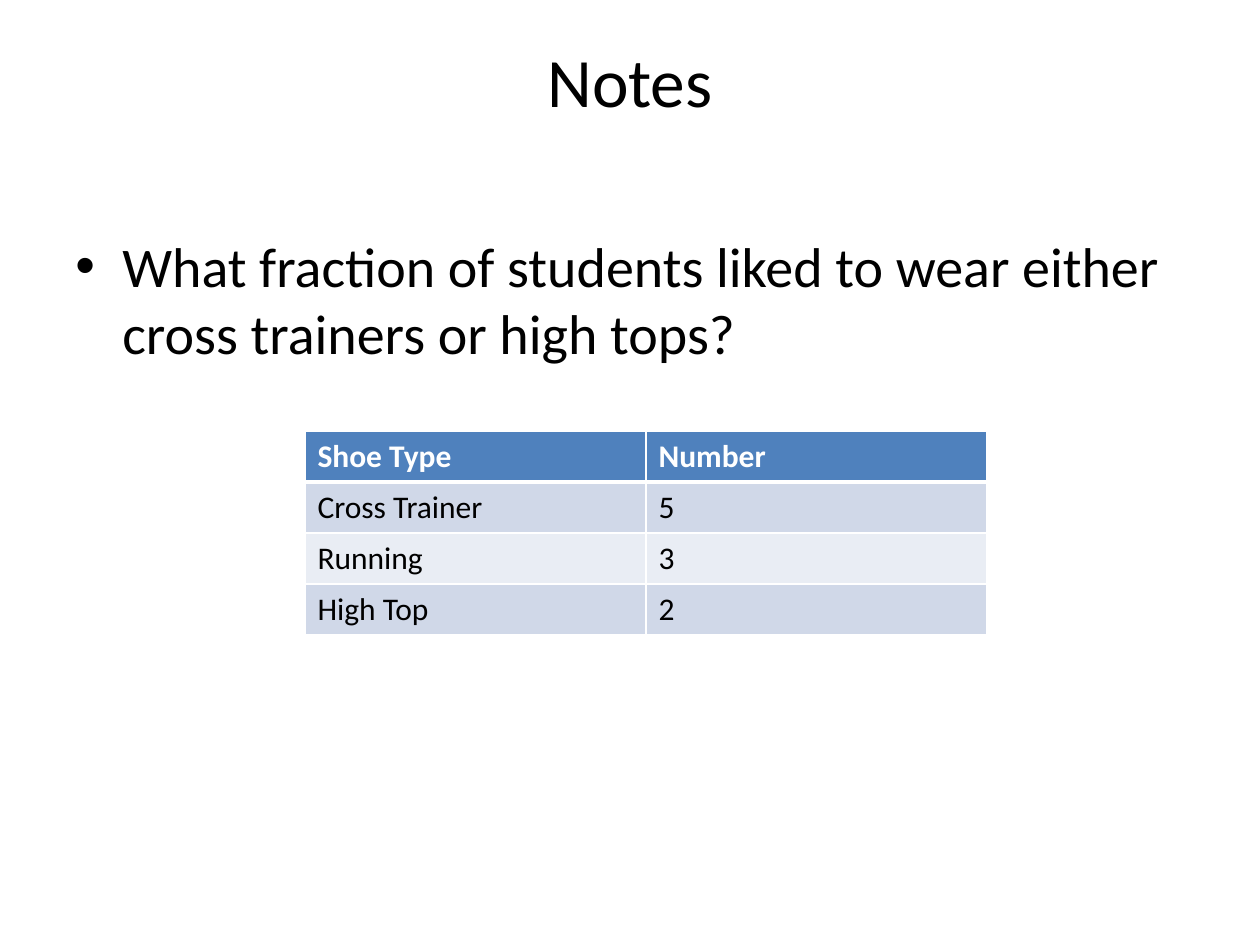
"""Build a slide with a question about shoe types and a table of counts."""
import lxml.etree
import pptx
import pptx.dml.color
import pptx.enum.text
import pptx.oxml
import pptx.oxml.ns
import pptx.util

PX = 914400 / 126
BLACK = pptx.dml.color.RGBColor(0x00, 0x00, 0x00)
WHITE = pptx.dml.color.RGBColor(0xFF, 0xFF, 0xFF)
HEADER_BLUE = pptx.dml.color.RGBColor(0x4F, 0x81, 0xBD)
BANDS = [pptx.dml.color.RGBColor(0xE9, 0xED, 0xF4), pptx.dml.color.RGBColor(0xD0, 0xD8, 0xE8)]
NAMESPACE = pptx.oxml.ns.nsdecls("a")


def px(count):
    return pptx.util.Emu(round(count * PX))


def write(frame, text, size, color, bold=False):
    para = frame.paragraphs[0]
    span = para.add_run()
    span.text = text
    span.font.color.rgb = color
    formats = {"name": "Calibri", "size": pptx.util.Pt(size), "bold": bold}
    for key, value in formats.items():
        setattr(span.font, key, value)
    return para


deck = pptx.Presentation()
deck.slide_width, deck.slide_height = px(1260), px(945)
page = deck.slides.add_slide(deck.slide_layouts[6])

title_box = page.shapes.add_textbox(px(63), px(38), px(1134), px(157))
question_box = page.shapes.add_textbox(px(63), px(220), px(1134), px(624))
for box, top_margin in [(title_box, 0), (question_box, 11)]:
    formats = {
        "word_wrap": True,
        "margin_top": px(top_margin),
        "vertical_anchor": pptx.enum.text.MSO_ANCHOR.TOP,
    }
    for key, value in formats.items():
        setattr(box.text_frame, key, value)

title = write(title_box.text_frame, "Notes", 39.6, BLACK)
title.alignment = pptx.enum.text.PP_ALIGN.CENTER

question = write(
    question_box.text_frame,
    "What fraction of students liked to wear either cross trainers or high tops?",
    32,
    BLACK,
)
properties = question._p.get_or_add_pPr()
properties.set("marL", str(px(47)))
properties.set("indent", str(-px(47)))
for tag in ['buFont typeface="Arial"', 'buChar char="•"']:
    properties.append(pptx.oxml.parse_xml(f"<a:{tag} {NAMESPACE}/>"))

rows = [("Shoe Type", "Number"), ("Cross Trainer", "5"), ("Running", "3"), ("High Top", "2")]
table = page.shapes.add_table(4, 2, px(305), px(431), px(682), px(204)).table
for column in table.columns:
    column.width = px(341)
for row_index, row in enumerate(rows):
    table.rows[row_index].height = px(51)
    header = row_index == 0
    widths = {"lnL": 1, "lnR": 1, "lnT": 3 if row_index == 1 else 1, "lnB": 3 if header else 1}
    for column_index, text in enumerate(row):
        cell = table.cell(row_index, column_index)
        write(cell.text_frame, text, 18, WHITE if header else BLACK, header)
        cell_properties = cell._tc.get_or_add_tcPr()
        for side, width in widths.items():
            cell_properties.append(pptx.oxml.parse_xml(
                f'<a:{side} {NAMESPACE} w="{pptx.util.Pt(width)}"><a:solidFill>'
                f'<a:srgbClr val="{WHITE}"/></a:solidFill></a:{side}>'
            ))
        cell.fill.solid()
        cell.fill.fore_color.rgb = HEADER_BLUE if header else BANDS[row_index % 2]

deck.save("out.pptx")
